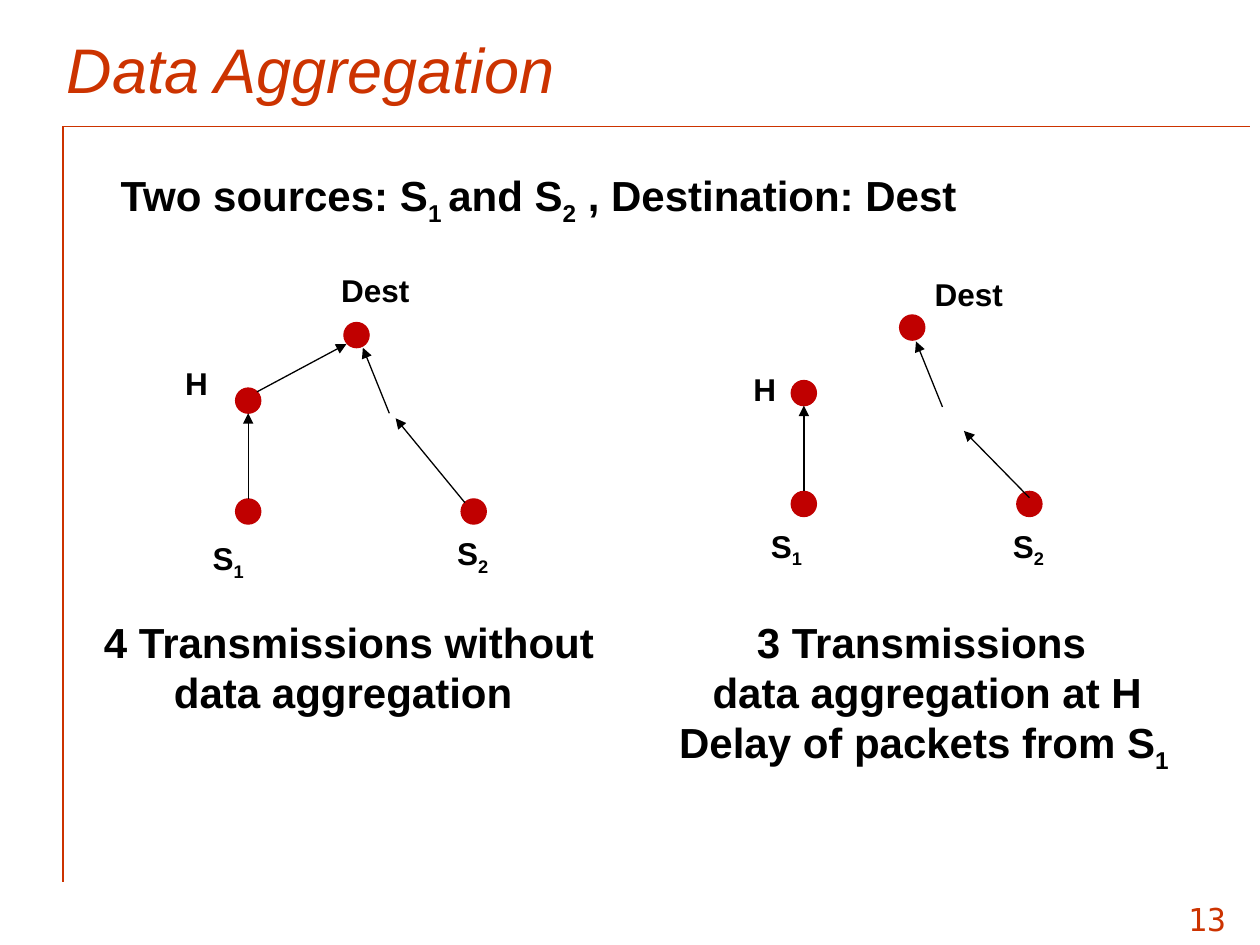
from dataclasses import dataclass
from lxml import etree
from pptx import Presentation
from pptx.dml.color import RGBColor
from pptx.enum.shapes import MSO_CONNECTOR, MSO_SHAPE
from pptx.enum.text import MSO_ANCHOR, MSO_AUTO_SIZE, PP_ALIGN
from pptx.oxml.ns import qn
from pptx.util import Pt

PX = 9144
LINE = MSO_CONNECTOR.STRAIGHT
OVAL = MSO_SHAPE.OVAL
TOP, MID = MSO_ANCHOR.TOP, MSO_ANCHOR.MIDDLE
LEFT, CENTER, RIGHT = PP_ALIGN.LEFT, PP_ALIGN.CENTER, PP_ALIGN.RIGHT
FIT, FIXED = MSO_AUTO_SIZE.SHAPE_TO_FIT_TEXT, MSO_AUTO_SIZE.NONE


@dataclass(frozen=True)
class Theme:
    ink: str = "000000"
    accent: str = "CC3300"
    node: str = "C00000"
    font: str = "Arial"
    mono: str = "DejaVu Sans Mono"
    title: int = 36
    body: int = 24
    label: int = 18


THEME = Theme()
DOT = 20
NODES = {"S1": (0, 140), "S2": (179, 140), "H": (0, 52), "Dest": (86, 0)}
RELAY = (10, 140, 10, 72)


def emu(*vals):
    return [v * PX for v in vals]


def write(slide, box, text, size=THEME.label, color=THEME.ink, font=THEME.font,
          bold=True, italic=False, align=LEFT, anchor=TOP, wrap=True, fit=FIT):
    frame = slide.shapes.add_textbox(*emu(*box)).text_frame
    frame.word_wrap = wrap
    frame.auto_size = fit
    frame.vertical_anchor = anchor
    for i, row in enumerate(text.split("\n")):
        para = frame.paragraphs[0] if i == 0 else frame.add_paragraph()
        para.alignment = align
        for j, part in enumerate(row.split("|")):
            if not part:
                continue
            run = para.add_run()
            run.text = part
            run.font.size = Pt(size)
            run.font.name = font
            run.font.bold = bold
            run.font.italic = italic
            run.font.color.rgb = RGBColor.from_string(color)
            if j % 2:
                run.font._element.set("baseline", "-25000")


def rule(slide, ends, color=THEME.ink, width=0.75, arrow=False):
    line = slide.shapes.add_connector(LINE, *emu(*ends))
    line.line.color.rgb = RGBColor.from_string(color)
    line.line.width = Pt(width)
    props = line._element.spPr
    if arrow:
        etree.SubElement(props.find(qn("a:ln")), qn("a:tailEnd"), type="triangle")
    etree.SubElement(props, qn("a:effectLst"))


def node(slide, x, y):
    dot = slide.shapes.add_shape(OVAL, *emu(x, y, DOT, DOT))
    dot.shadow.inherit = False
    dot.fill.solid()
    dot.fill.fore_color.rgb = RGBColor.from_string(THEME.node)
    dot.line.color.rgb = RGBColor.from_string(THEME.node)
    dot.line.width = Pt(0.75)


def header(slide, box):
    x, y, w, h = box
    rule(slide, (x + 7, y + 96, x + 949, y + 96), THEME.accent, 0.25)
    rule(slide, (x + 7, y + 96, x + 7, y + 696), THEME.accent)
    write(slide, box, "Data Aggregation", size=THEME.title, color=THEME.accent,
          bold=False, italic=True, anchor=MID, fit=FIXED)


def footer(slide, box):
    write(slide, box, "13", color=THEME.accent, font=THEME.mono,
          bold=False, align=RIGHT, anchor=MID, fit=FIXED)


def network(slide, box, hops, labels, note, caption):
    x, y = box
    for dx, dy in NODES.values():
        node(slide, x + dx, y + dy)
    for x1, y1, x2, y2 in [RELAY, *hops]:
        rule(slide, (x + x1, y + y1, x + x2, y + y2), arrow=True)
    for text, dx, dy, w in labels:
        write(slide, (x + dx, y + dy, w, 40), text, wrap=False)
    dx, dy, w, h = note
    write(slide, (x + dx, y + dy, w, h), caption, size=THEME.body, align=CENTER)


def main():
    deck = Presentation()
    deck.slide_width, deck.slide_height = emu(1000, 750)
    slide = deck.slides.add_slide(deck.slide_layouts[6])
    header(slide, (43, 4, 901, 100))
    footer(slide, (900, 717, 83, 25))
    network(
        slide, (187, 256),
        [(17, 55, 88, 17), (182, 143, 127, 76), (122, 72, 101, 20)],
        [("S|1|", -28, 167, 46), ("S|2|", 166, 163, 46),
         ("H", -50, 28, 38), ("Dest", 74, -46, 75)],
        (-116, 228, 412, 91),
        "4 Transmissions without data aggregation ")
    network(
        slide, (628, 250),
        [(189, 145, 137, 92), (120, 73, 99, 21)],
        [("S|1|", -26, 163, 46), ("S|2|", 166, 163, 46),
         ("H", -40, 39, 38), ("Dest", 104, -37, 75)],
        (-100, 234, 416, 131),
        "3 Transmissions \ndata aggregation at H\nDelay of packets from S|1 |")
    write(slide, (86, 130, 816, 50),
          "Two sources: S|1 |and S|2| , Destination: Dest", size=THEME.body)
    deck.save("out.pptx")


if __name__ == "__main__":
    main()
